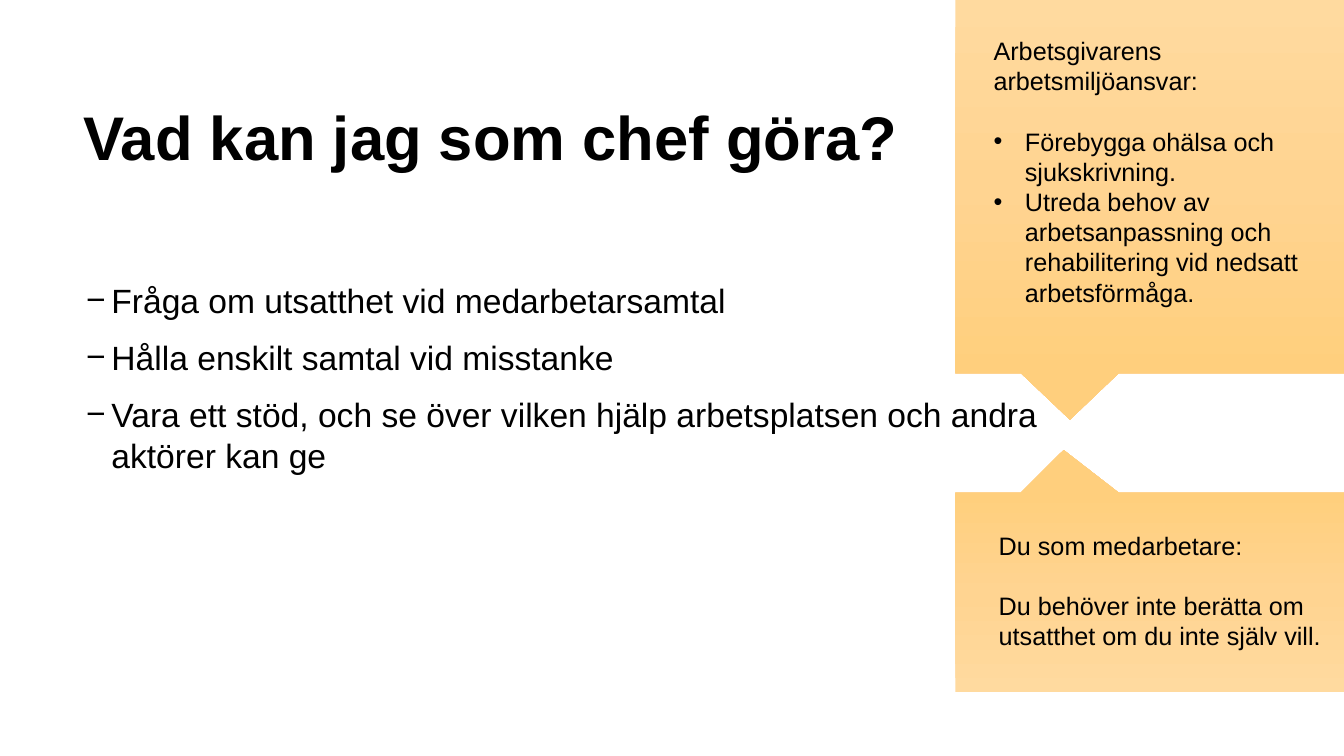
import copy
from dataclasses import dataclass

import pptx
import pptx.dml.color
import pptx.enum.dml
import pptx.enum.shapes
import pptx.oxml.ns
import pptx.slide
import pptx.util
from lxml import etree

Cm = pptx.util.Cm
Pt = pptx.util.Pt
RGB = pptx.dml.color.RGBColor

BLACK = RGB(0x00, 0x00, 0x00)
AMBER = (
    (0.0, RGB(0xFF, 0xDA, 0x9F)),
    (0.5, RGB(0xFF, 0xD4, 0x91)),
    (1.0, RGB(0xFF, 0xCF, 0x7D)),
)
FONT = "Arial"
GAP = 21.6  # one line of side text, in points


@dataclass(frozen=True)
class Frame:
    left: float
    top: float
    width: float
    height: float

    def size(self) -> tuple:
        return Cm(self.left), Cm(self.top), Cm(self.width), Cm(self.height)


@dataclass(frozen=True)
class Para:
    lines: tuple[str, ...]
    bullet: str = ""
    margin: float = 0
    hang: float = 0
    before: float = 0
    after: float = 0
    pitch: float = 1


@dataclass(frozen=True)
class Block:
    frame: Frame
    size: float
    paras: tuple[Para, ...]
    bold: bool = False


@dataclass(frozen=True)
class Callout:
    frame: Frame
    tip: tuple[float, float]
    flip: bool = False


def dash(text: str) -> Para:
    return Para((text,), "−", 0.71, 0.64, after=12)


def dot(text: str, before: float = 0) -> Para:
    return Para((text,), "•", 0.79, 0.79, before=before)


CALLOUTS = (
    Callout(Frame(24.08, 0, 9.88, 9.4), (-0.208, 0.625)),
    Callout(Frame(24.08, 12.42, 9.88, 5.03), (-0.224, 0.714), flip=True),
)

BLOCKS = (
    # Title
    Block(Frame(1.85, 2.72, 26.7, 3.1), 44,
          (Para(("Vad kan jag som chef göra?",), pitch=0.8),), bold=True),
    # Advice to managers
    Block(Frame(1.85, 6.93, 26.7, 10.39), 24, (
        dash("Fråga om utsatthet vid medarbetarsamtal"),
        dash("Hålla enskilt samtal vid misstanke"),
        dash("Vara ett stöd, och se över vilken hjälp arbetsplatsen "
             "och andra aktörer kan ge"),
    )),
    # Employer's duty
    Block(Frame(24.79, 0.76, 10.24, 7.19), 18, (
        Para(("Arbetsgivarens ", "arbetsmiljöansvar:")),
        dot("Förebygga ohälsa och sjukskrivning.", GAP),
        dot("Utreda behov av arbetsanpassning och rehabilitering "
            "vid nedsatt arbetsförmåga."),
    )),
    # Employee's choice
    Block(Frame(24.92, 13.23, 9.07, 3.33), 18, (
        Para(("Du som medarbetare:",)),
        Para(("Du behöver inte berätta om utsatthet om du inte själv vill.",),
             before=GAP),
    )),
)


def draw_callout(slide: pptx.slide.Slide, item: Callout) -> None:
    kind = pptx.enum.shapes.MSO_SHAPE.RECTANGULAR_CALLOUT
    shape = slide.shapes.add_shape(kind, *item.frame.size())
    shape.shadow.inherit = False
    shape.line.fill.background()
    for spot, value in enumerate(item.tip):
        shape.adjustments[spot] = value
    if item.flip:
        shape._element.spPr.xfrm.set("flipV", "1")

    # Gradient from light to dark
    fill = shape.fill
    fill.gradient()
    fill.gradient_angle = 270
    stops = shape._element.spPr.find(".//" + pptx.oxml.ns.qn("a:gsLst"))
    stops.append(copy.deepcopy(stops[-1]))
    for stop, (place, color) in zip(fill.gradient_stops, AMBER):
        stop.position = place
        stop.color.rgb = color


def draw_block(slide: pptx.slide.Slide, block: Block) -> None:
    text = slide.shapes.add_textbox(*block.frame.size()).text_frame
    text.word_wrap = True
    for index, item in enumerate(block.paras):
        para = text.add_paragraph() if index else text.paragraphs[0]
        if item.bullet:
            props = para._p.get_or_add_pPr()
            props.set("marL", str(Cm(item.margin)))
            props.set("indent", str(-Cm(item.hang)))
            face = etree.SubElement(props, pptx.oxml.ns.qn("a:buFont"))
            face.set("typeface", FONT)
            mark = etree.SubElement(props, pptx.oxml.ns.qn("a:buChar"))
            mark.set("char", item.bullet)
        para.line_spacing = item.pitch
        para.space_before = Pt(item.before)
        para.space_after = Pt(item.after)
        for row, line in enumerate(item.lines):
            if row:
                para.add_line_break()
            run = para.add_run()
            run.text = line
            run.font.name = FONT
            run.font.size = Pt(block.size)
            run.font.bold = block.bold
            run.font.color.rgb = BLACK


def main() -> None:
    deck = pptx.Presentation()
    deck.slide_width = Cm(33.87)
    deck.slide_height = Cm(19.05)
    slide = deck.slides.add_slide(deck.slide_layouts[6])
    for item in CALLOUTS:
        draw_callout(slide, item)
    for block in BLOCKS:
        draw_block(slide, block)
    deck.save("out.pptx")


if __name__ == "__main__":
    main()
